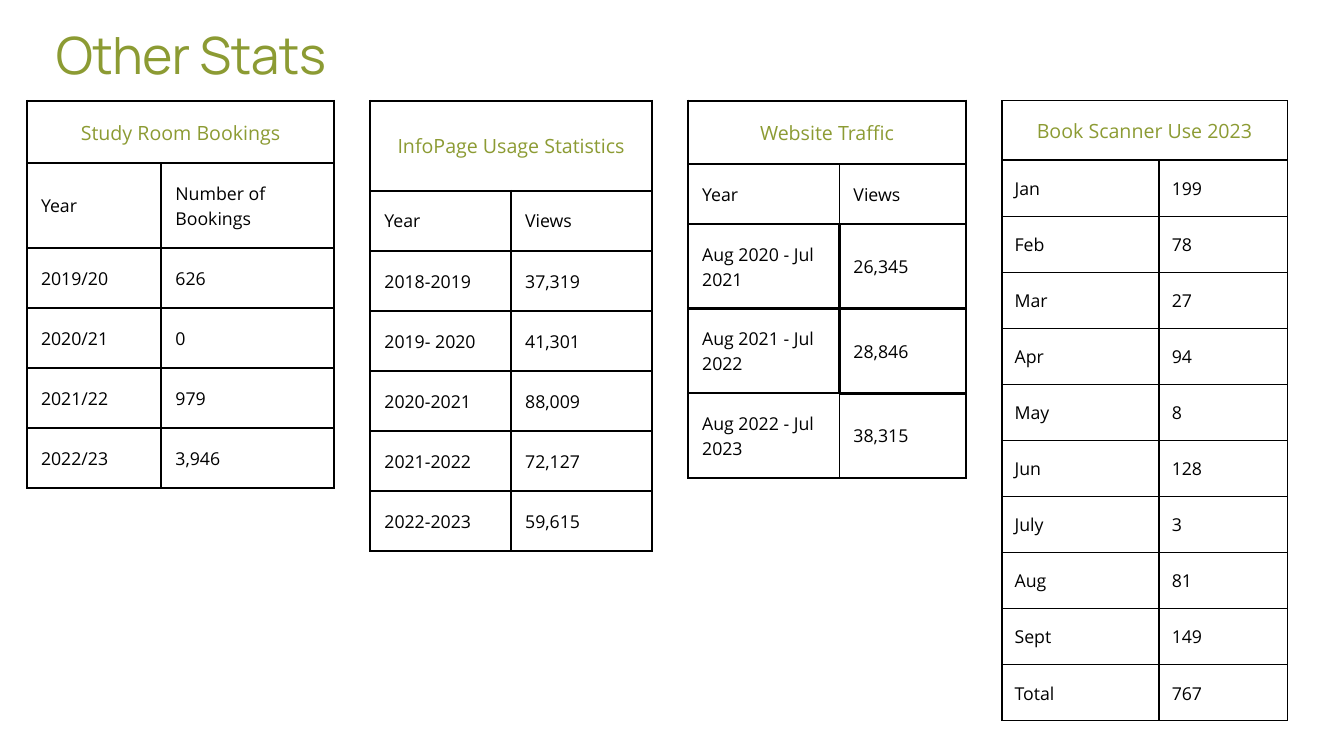
from pptx import Presentation
from pptx.dml.color import RGBColor
from pptx.enum.text import MSO_ANCHOR, MSO_AUTO_SIZE, PP_ALIGN
from pptx.oxml.ns import qn
from pptx.util import Cm, Pt
from lxml.etree import SubElement

COLOURS = {"heading": "8C9B33", "body": "000000", "border": "000000"}
HEADING_FONT = {"name": "Open Sans", "size": Pt(21)}
BODY_FONT = {"name": "Open Sans", "size": Pt(19)}
TITLE_FONT = {"name": "Manrope", "size": Pt(55), "bold": False}
TABLE_TOP = 3.81
HEAVY_BORDER = 3

# Boxes, columns, rows, insets in cm; borders in points.
# "heavy" maps (row, column) to the sides drawn with the heavy border.
TABLES = [
    {
        "heading": "Study Room Bookings",
        "left": 1.02, "columns": [5.08, 6.53], "rows": [2.36, 3.2] + [2.27] * 4,
        "inset": 0.53, "border": 2.25, "heavy": {},
        "data": [("Year", "Number of Bookings"), ("2019/20", "626"), ("2020/21", "0"),
                 ("2021/22", "979"), ("2022/23", "3,946")],
    },
    {
        "heading": "InfoPage Usage Statistics",
        "left": 14, "columns": [5.32, 5.32], "rows": [3.4] + [2.27] * 6,
        "inset": 0.53, "border": 2.25, "heavy": {},
        "data": [("Year", "Views"), ("2018-2019", "37,319"), ("2019- 2020", "41,301"),
                 ("2020-2021", "88,009"), ("2021-2022", "72,127"),
                 ("2022-2023", "59,615")],
    },
    {
        "heading": "Website Traffic",
        "left": 26.01, "columns": [5.72, 4.78], "rows": [2.39, 2.27] + [3.2] * 3,
        "inset": 0.53, "border": 2.25,
        "heavy": {(0, 0): "LTR", (0, 1): "LTR", (2, 0): "LRB", (2, 1): "LRB",
                  (3, 0): "LTR", (3, 1): "LTRB", (4, 1): "TRB"},
        "data": [("Year", "Views"), ("Aug 2020 - Jul 2021", "26,345"),
                 ("Aug 2021 - Jul 2022", "28,846"), ("Aug 2022 - Jul 2023", "38,315")],
    },
    {
        "heading": "Book Scanner Use 2023",
        "left": 37.87, "columns": [5.94, 4.84], "rows": [2.24] + [2.12] * 10,
        "inset": 0.48, "border": 1.5, "heavy": {},
        "data": [("Jan", "199"), ("Feb", "78"), ("Mar", "27"), ("Apr", "94"),
                 ("May", "8"), ("Jun", "128"), ("July", "3"), ("Aug", "81"),
                 ("Sept", "149"), ("Total", "767")],
    },
]


def set_attributes(target, values):
    for name, value in values.items():
        setattr(target, name, value)


def format_paragraph(paragraph, font_values, colour, line_spacing, alignment):
    set_attributes(paragraph, {"line_spacing": Pt(line_spacing), "alignment": alignment})
    for run in paragraph.runs:
        set_attributes(run.font, font_values)
        run.font.color.rgb = RGBColor.from_string(COLOURS[colour])


def margins(inset):
    return {f"margin_{side}": Cm(inset) for side in ("left", "top", "right", "bottom")}


def draw_borders(cell, width, heavy_sides):
    properties = cell._tc.get_or_add_tcPr()
    for side in "LRTB":
        points = HEAVY_BORDER if side in heavy_sides else width
        line = SubElement(properties, qn(f"a:ln{side}"), w=str(Pt(points)))
        fill = SubElement(line, qn("a:solidFill"))
        SubElement(fill, qn("a:srgbClr"), val=COLOURS["border"])


def add_title(slide, left, top, width, height):
    title = slide.shapes.title
    set_attributes(title, {"left": Cm(left), "top": Cm(top),
                           "width": Cm(width), "height": Cm(height)})
    frame = title.text_frame
    frame.text = "Other Stats"
    set_attributes(frame, {"word_wrap": True, "vertical_anchor": MSO_ANCHOR.TOP,
                           "auto_size": MSO_AUTO_SIZE.SHAPE_TO_FIT_TEXT, **margins(0)})
    paragraph = frame.paragraphs[0]
    format_paragraph(paragraph, TITLE_FONT, "heading", 60.5, PP_ALIGN.LEFT)
    paragraph.runs[0].font._element.set("spc", "-50")


def add_stats_table(slide, left, top, stats):
    """Add a two-column table under a heading that spans both columns."""
    columns, rows = stats["columns"], stats["rows"]
    table = slide.shapes.add_table(len(rows), len(columns), Cm(left), Cm(top),
                                   Cm(sum(columns)), Cm(sum(rows))).table
    set_attributes(table, {"first_row": False, "horz_banding": False})
    for column, width in zip(table.columns, columns):
        column.width = Cm(width)
    for row, height in zip(table.rows, rows):
        row.height = Cm(height)
    table.cell(0, 0).merge(table.cell(0, 1))

    for row, values in enumerate([(stats["heading"], ""), *stats["data"]]):
        for column, value in enumerate(values):
            cell = table.cell(row, column)
            cell.text = value
            set_attributes(cell, {"vertical_anchor": MSO_ANCHOR.MIDDLE,
                                  **margins(stats["inset"])})
            draw_borders(cell, stats["border"], stats["heavy"].get((row, column), ""))
            cell.fill.background()
            paragraph = cell.text_frame.paragraphs[0]
            if row == 0:
                format_paragraph(paragraph, HEADING_FONT, "heading", 29.4, PP_ALIGN.CENTER)
            else:
                format_paragraph(paragraph, BODY_FONT, "body", 26.6, PP_ALIGN.LEFT)


def main():
    presentation = Presentation()
    set_attributes(presentation, {"slide_width": Cm(50.8), "slide_height": Cm(28.58)})
    slide = presentation.slides.add_slide(presentation.slide_layouts.get_by_name("Title Only"))
    for stats in TABLES:
        add_stats_table(slide, stats["left"], TABLE_TOP, stats)
    add_title(slide, 2.11, 1.07, 22.56, 2.31)
    presentation.save("out.pptx")


if __name__ == "__main__":
    main()
